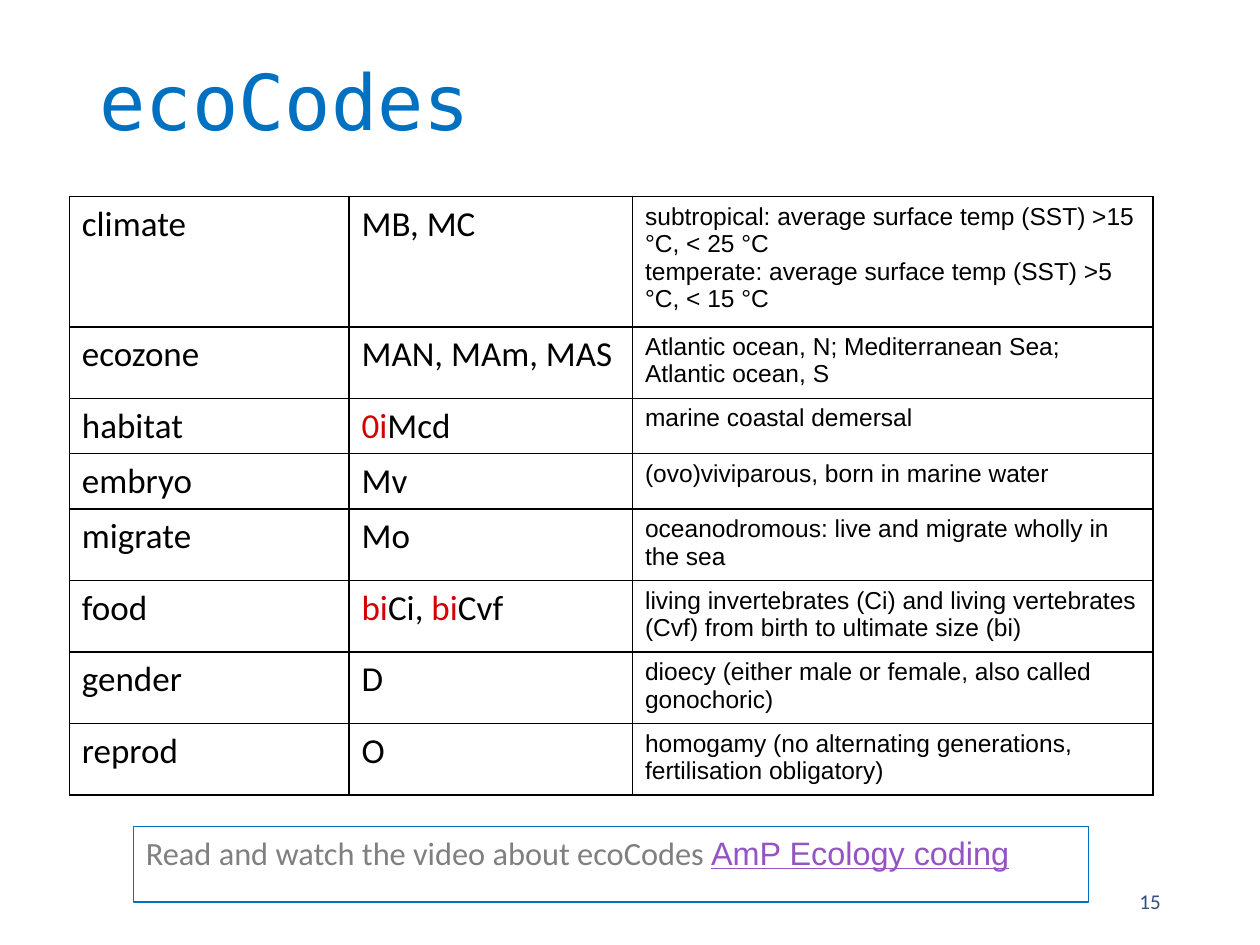
from lxml import etree
from pptx import Presentation
from pptx.dml.color import RGBColor
from pptx.enum import shapes, text
from pptx.oxml.ns import qn
from pptx.util import Inches, Pt

COLORS = {"blue": "0070C0", "black": "000000", "red": "D40001",
          "gray": "808080", "link": "9454C3", "number": "374C81"}

# Content: label, code runs (text, color), description paragraphs
ROWS = [
    ("climate", [("MB, MC", "black")],
     ["subtropical: average surface temp (SST) >15 °C, < 25 °C",
      "temperate: average surface temp (SST) >5 °C, < 15 °C"]),
    ("ecozone", [("MAN, MAm, MAS", "black")],
     ["Atlantic ocean, N; Mediterranean Sea; Atlantic ocean, S"]),
    ("habitat", [("0i", "red"), ("Mcd", "black")], ["marine coastal demersal"]),
    ("embryo", [("Mv", "black")], ["(ovo)viviparous, born in marine water"]),
    ("migrate", [("Mo", "black")],
     ["oceanodromous: live and migrate wholly in the sea"]),
    ("food", [("bi", "red"), ("Ci, ", "black"), ("bi", "red"), ("Cvf", "black")],
     ["living invertebrates (Ci) and living vertebrates (Cvf) "
      "from birth to ultimate size (bi)"]),
    ("gender", [("D", "black")],
     ["dioecy (either male or female, also called gonochoric)"]),
    ("reprod", [("O", "black")],
     ["homogamy (no alternating generations, fertilisation obligatory)"]),
]
COL_WIDTHS = [2.22, 2.25, 4.13]
ROW_HEIGHTS = [0.98, 0.54, 0.44, 0.44, 0.54, 0.54, 0.54, 0.54]


def rgb(name):
    return RGBColor.from_string(COLORS[name])


def add_run(p, value, size=20, font="Calibri", color="black", underline=None):
    r = p.add_run()
    r.text = value
    r.font.size, r.font.name, r.font.underline = Pt(size), font, underline
    r.font.color.rgb = rgb(color)


def add_borders(cell):
    tc_pr = cell._tc.get_or_add_tcPr()
    for i, side in enumerate(("lnL", "lnR", "lnT", "lnB")):
        ln = etree.Element(qn(f"a:{side}"), w=str(Pt(1)))
        fill = etree.SubElement(ln, qn("a:solidFill"))
        etree.SubElement(fill, qn("a:srgbClr"), val=COLORS["black"])
        tc_pr.insert(i, ln)


prs = Presentation()
prs.slide_width, prs.slide_height = Inches(10), Inches(7.5)
s = prs.slides.add_slide(prs.slide_layouts[5])

# Title
title = s.shapes.title
title.left, title.top = Inches(0.69), Inches(0.11)
title.width, title.height = Inches(8.62), Inches(1.45)
title.text_frame.vertical_anchor = text.MSO_ANCHOR.MIDDLE
p = title.text_frame.paragraphs[0]
p.alignment, p.line_spacing = text.PP_ALIGN.LEFT, 0.9
add_run(p, "ecoCodes", size=44, font="DejaVu Sans Mono", color="blue")

# Slide number
number = s.shapes.add_textbox(Inches(7.06), Inches(6.95), Inches(2.25), Inches(0.4))
tf = number.text_frame
tf.word_wrap, tf.vertical_anchor = True, text.MSO_ANCHOR.MIDDLE
tf.paragraphs[0].alignment = text.PP_ALIGN.RIGHT
add_run(tf.paragraphs[0], "15", size=12, color="number")

# Table of codes
table = s.shapes.add_table(len(ROWS), len(COL_WIDTHS), Inches(0.55), Inches(1.56),
                           Inches(sum(COL_WIDTHS)), Inches(sum(ROW_HEIGHTS))).table
table.first_row = table.horz_banding = False
for col, width in zip(table.columns, COL_WIDTHS):
    col.width = Inches(width)
for row, height, (label, codes, descriptions) in zip(table.rows, ROW_HEIGHTS, ROWS):
    row.height = Inches(height)
    for cell in row.cells:
        cell.fill.background()
        add_borders(cell)
    label_tf, code_tf, description_tf = (cell.text_frame for cell in row.cells)
    add_run(label_tf.paragraphs[0], label)
    for code, color in codes:
        add_run(code_tf.paragraphs[0], code, color=color)
    for i, description in enumerate(descriptions):
        p = description_tf.add_paragraph() if i else description_tf.paragraphs[0]
        add_run(p, description, size=14, font="Arial")

# Reading box
box = s.shapes.add_shape(shapes.MSO_SHAPE.RECTANGLE, Inches(1.06), Inches(6.56),
                         Inches(7.58), Inches(0.6))
box.shadow.inherit = False
box.fill.background()
box.line.color.rgb, box.line.width = rgb("blue"), Pt(0.75)
tf = box.text_frame
tf.word_wrap, tf.vertical_anchor = True, text.MSO_ANCHOR.TOP
p = tf.paragraphs[0]
p.alignment = text.PP_ALIGN.LEFT
add_run(p, "Read and watch the video about ecoCodes ", size=18.5, color="gray")
add_run(p, "AmP Ecology coding", size=18.5, font="Arial", color="link", underline=True)

prs.save("out.pptx")
